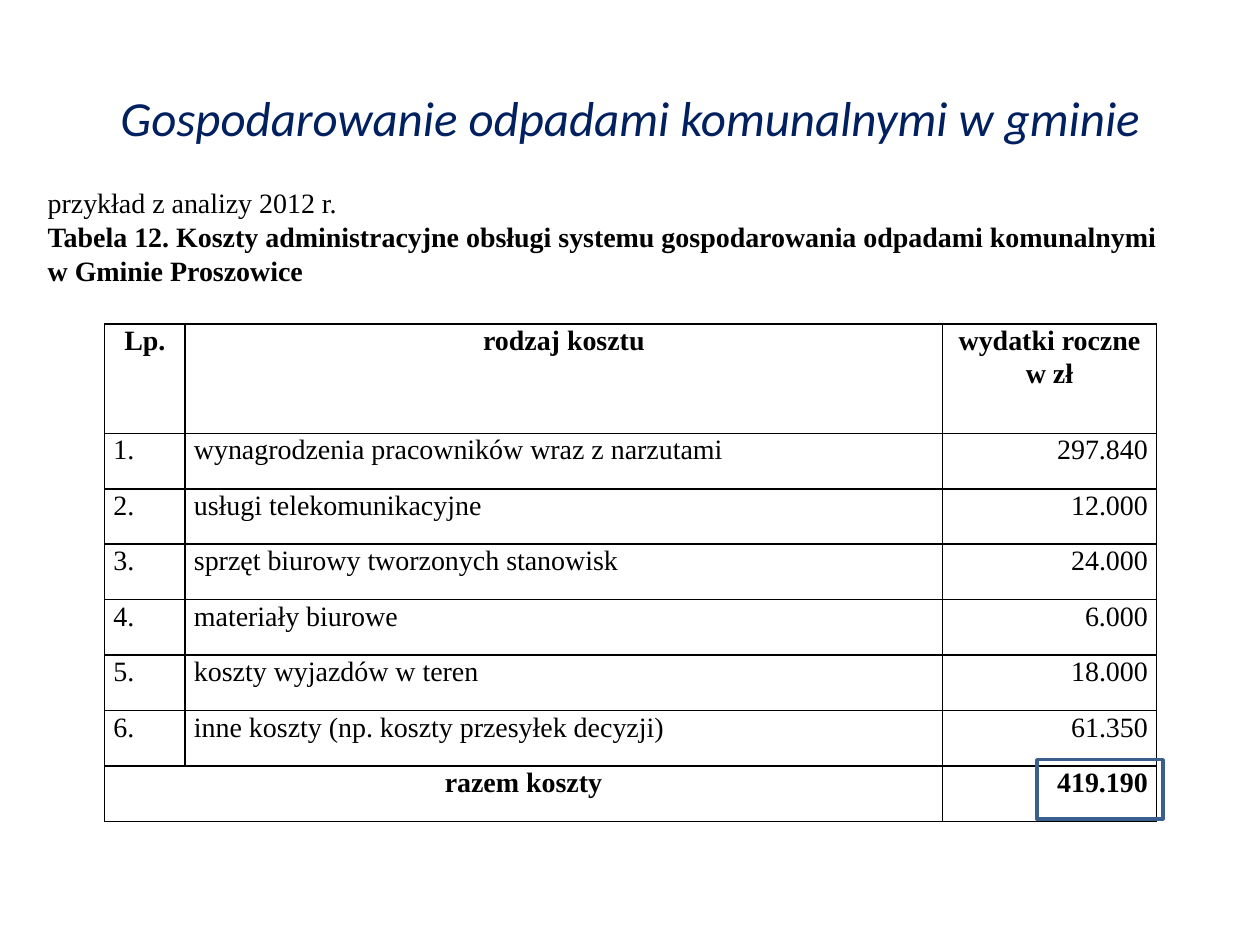
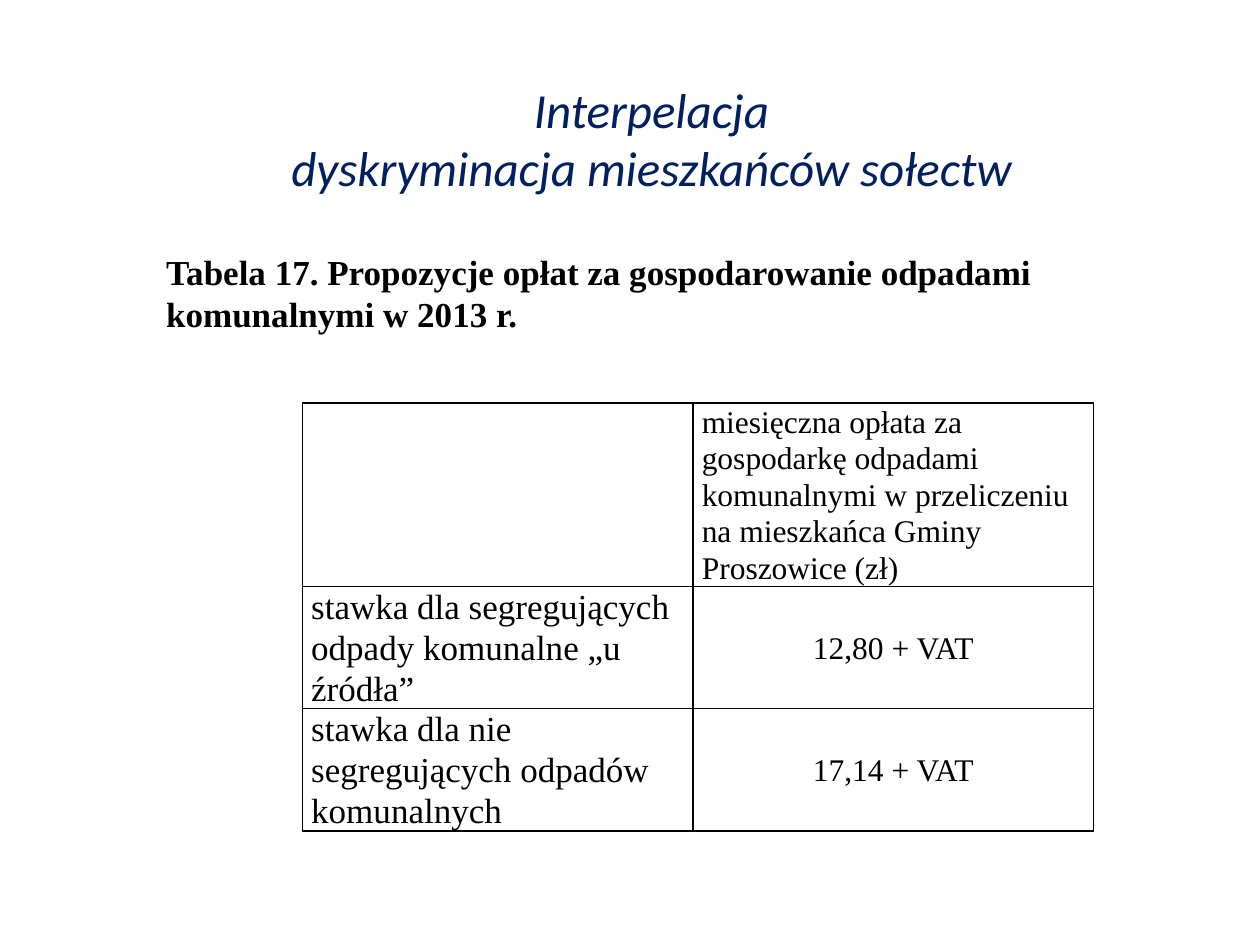
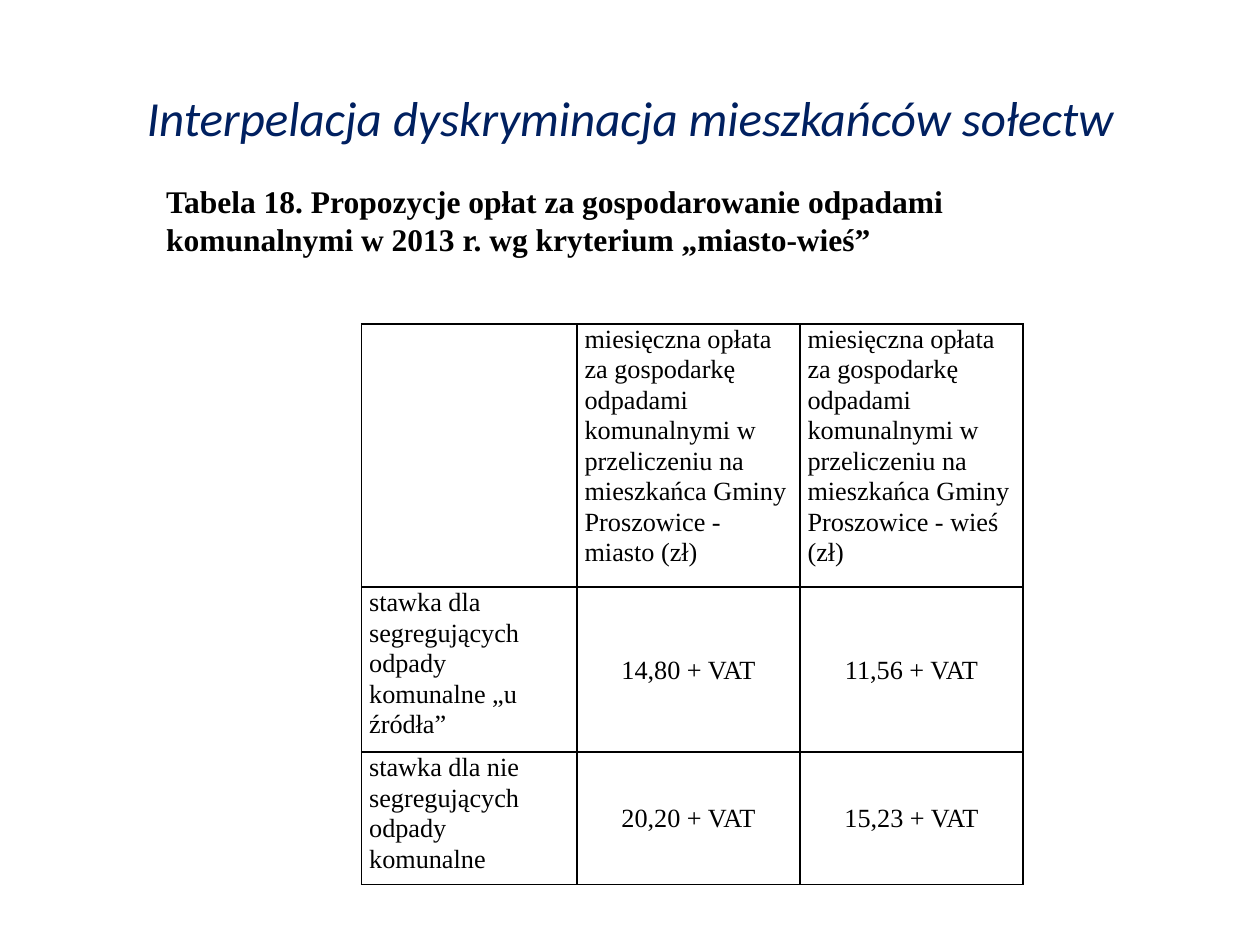
"""Build three slides on municipal waste costs and fees."""
from lxml import etree
from pptx import Presentation, util as u
from pptx.dml.color import RGBColor
from pptx.enum import shapes, text
from pptx.oxml import ns

PX = 9144
NAVY = RGBColor(0x00, 0x20, 0x60)
BLACK = RGBColor(0x00, 0x00, 0x00)
BLUE = RGBColor(0x3A, 0x5F, 0x8C)
SERIF = "Times New Roman"
LEFT, MID, RIGHT = text.PP_ALIGN.LEFT, text.PP_ALIGN.CENTER, text.PP_ALIGN.RIGHT
TOP, HALF = text.MSO_ANCHOR.TOP, text.MSO_ANCHOR.MIDDLE


def write(frame, lines, size, bold=False, align=LEFT, font=SERIF, color=BLACK):
    for i, line in enumerate(lines):
        para = frame.paragraphs[0] if i == 0 else frame.add_paragraph()
        para.alignment = align
        run = para.add_run()
        run.text = line
        run.font.size = u.Pt(size)
        run.font.name = font
        run.font.bold = bold
        run.font.color.rgb = color


def fill(cell, words, size, pad, bold, align, anchor):
    cell.fill.background()
    cell.margin_left = cell.margin_right = pad * PX
    cell.margin_top = cell.margin_bottom = 0
    cell.vertical_anchor = anchor
    if words:
        write(cell.text_frame, [words], size, bold, align)
        para = cell.text_frame.paragraphs[0]
        para.line_spacing = 1.05
        para.space_after = u.Pt(8)
    props = cell._tc.get_or_add_tcPr()
    for i, side in enumerate(("lnL", "lnR", "lnT", "lnB")):
        line = etree.Element(ns.qn("a:" + side), w="12700")
        paint = etree.SubElement(line, ns.qn("a:solidFill"))
        etree.SubElement(paint, ns.qn("a:srgbClr"), val=str(BLACK))
        props.insert(i, line)


COSTS = [
    ("Lp.", "rodzaj kosztu", "wydatki roczne w zł"),
    ("1.", "wynagrodzenia pracowników wraz z narzutami", "297.840"),
    ("2.", "usługi telekomunikacyjne", "12.000"),
    ("3.", "sprzęt biurowy tworzonych stanowisk", "24.000"),
    ("4.", "materiały biurowe", "6.000"),
    ("5.", "koszty wyjazdów w teren", "18.000"),
    ("6.", "inne koszty (np. koszty przesyłek decyzji)", "61.350"),
    ("razem koszty", "", "419.190"),
]
FEE = "miesięczna opłata za gospodarkę odpadami komunalnymi w przeliczeniu na mieszkańca Gminy Proszowice"
SORTED = "stawka dla segregujących odpady komunalne „u źródła”"
RATES = [
    ("", FEE + " (zł)"),
    (SORTED, "12,80 + VAT"),
    ("stawka dla nie segregujących odpadów komunalnych", "17,14 + VAT"),
]
AREAS = [
    ("", FEE + " - miasto (zł)", FEE + " - wieś (zł)"),
    (SORTED, "14,80 + VAT", "11,56 + VAT"),
    ("stawka dla nie segregujących odpady komunalne", "20,20 + VAT", "15,23 + VAT"),
]
DECK = [
    dict(title=["Gospodarowanie odpadami komunalnymi w gminie"], spot=(50, 30),
         note=[("przykład z analizy 2012 r.", False),
               ("Tabela 12. Koszty administracyjne obsługi systemu gospodarowania odpadami komunalnymi", True),
               ("w Gminie Proszowice", True)],
         box=(28, 142, 918, 91), size=16, wrap=False,
         data=COSTS, at=(83, 257), cols=(64, 601, 170), rows=[87] + [44] * 7,
         pad=7, head=16, side=16, body=16),
    dict(title=["Interpelacja", "dyskryminacja mieszkańców sołectw"], spot=(67, 47),
         note=[("Tabela 17. Propozycje opłat za gospodarowanie odpadami komunalnymi w 2013 r.", True)],
         box=(122, 194, 776, 77), size=20, wrap=True,
         data=RATES, at=(240, 320), cols=(310, 318), rows=(145, 97, 97),
         pad=7, head=18, side=20, body=18),
    dict(title=["Interpelacja dyskryminacja mieszkańców sołectw"], spot=(50, 30),
         note=[("Tabela 18. Propozycje opłat za gospodarowanie odpadami komunalnymi "
                "w 2013 r. wg kryterium „miasto-wieś”", True)],
         box=(122, 139, 697, 71), size=18, wrap=True,
         data=AREAS, at=(287, 257), cols=(171, 177, 177), rows=(209, 131, 105),
         pad=6, head=15, side=15, body=15),
]

prs = Presentation()
prs.slide_width, prs.slide_height = 1000 * PX, 750 * PX

for page in DECK:
    slide = prs.slides.add_slide(prs.slide_layouts[5])
    title = slide.shapes.title
    title.left, title.top = (n * PX for n in page["spot"])
    title.width, title.height = 900 * PX, 125 * PX
    title.text_frame.vertical_anchor = HALF
    write(title.text_frame, page["title"], 28, False, MID, "Calibri", NAVY)
    for para in title.text_frame.paragraphs:
        para.runs[0].font.italic = True

    data, cols, rows = page["data"], page["cols"], page["rows"]
    grid = slide.shapes.add_table(len(rows), len(cols), *(n * PX for n in page["at"]),
                                  sum(cols) * PX, sum(rows) * PX).table
    grid.first_row = grid.horz_banding = False
    for col, wide in zip(grid.columns, cols):
        col.width = wide * PX
    for row, high in zip(grid.rows, rows):
        row.height = high * PX
    for r, line in enumerate(data):
        for c, words in enumerate(line):
            size = page["head"] if r == 0 else page["side"] if c == 0 else page["body"]
            bold, align, anchor = False, LEFT, TOP
            if data is COSTS:
                bold = r in (0, len(data) - 1)
                align = RIGHT if r and c == 2 else MID if bold else LEFT
            elif r and c:
                align, anchor = MID, HALF
            elif r and data is RATES:
                anchor = HALF
            fill(grid.cell(r, c), words, size, page["pad"], bold, align, anchor)
    if data is COSTS:
        grid.cell(7, 0).merge(grid.cell(7, 1))

    note = slide.shapes.add_textbox(*(n * PX for n in page["box"])).text_frame
    note.word_wrap = page["wrap"]
    note.auto_size = text.MSO_AUTO_SIZE.SHAPE_TO_FIT_TEXT
    note.vertical_anchor = HALF
    for i, (words, bold) in enumerate(page["note"]):
        if i:
            note.add_paragraph()
        para = note.paragraphs[i]
        run = para.add_run()
        run.text = words
        run.font.size, run.font.name = u.Pt(page["size"]), SERIF
        run.font.bold, run.font.color.rgb = bold, BLACK

    if data is COSTS:
        mark = slide.shapes.add_shape(shapes.MSO_SHAPE.RECTANGLE, 823 * PX, 603 * PX, 100 * PX, 47 * PX)
        mark.shadow.inherit = False
        mark.fill.background()
        mark.line.color.rgb = BLUE
        mark.line.width = u.Pt(2)

prs.save("out.pptx")
